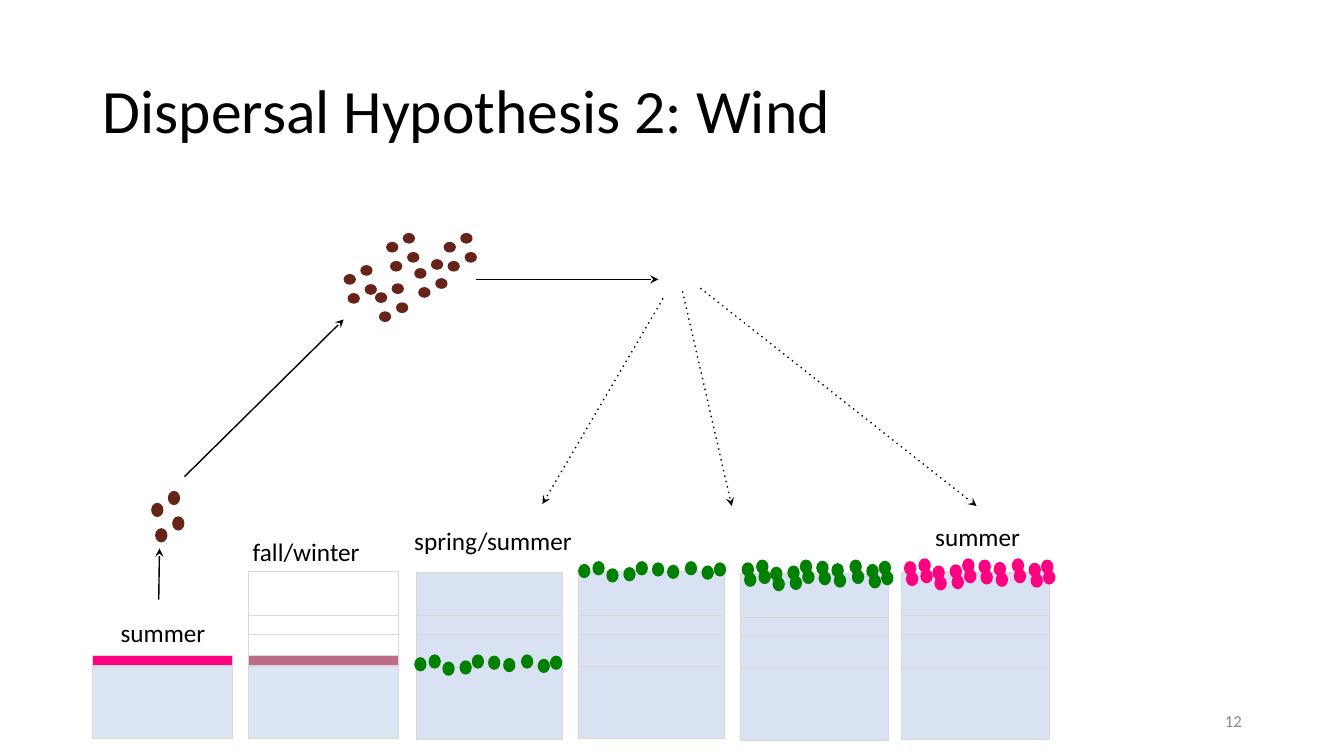
from dataclasses import dataclass
from typing import NamedTuple

from lxml import etree
from pptx import Presentation
from pptx import util as u
from pptx.dml import color
from pptx.enum import shapes, text
from pptx.oxml import ns
from pptx.slide import Slide


@dataclass(frozen=True)
class Theme:
    font: str = "Calibri"
    title_size: float = 44
    label_size: float = 18
    number_size: float = 12
    ink: str = "000000"
    number: str = "888888"
    outline: str = "D8D8D8"
    ice: str = "DCE6F2"
    melt: str = "D8E2F3"
    snow: str = "FFFFFF"
    bloom: str = "FF0080"
    buried_bloom: str = "BC6C87"
    green: str = "008000"
    spore: str = "662418"
    outline_width: float = 0.75
    arrow_width: float = 1


class Box(NamedTuple):
    left: float
    top: float
    width: float
    height: float


class Core(NamedTuple):
    left: float
    ice_top: float
    width: float
    ice: str
    upper: str | None = None
    band: str | None = None


class DotGroup(NamedTuple):
    left: float
    top: float
    fill: str
    offsets: list[tuple[float, float]]
    x_scale: float = 1
    y_scale: float = 1


class Arrow(NamedTuple):
    x1: float
    y1: float
    x2: float
    y2: float
    dotted: bool = False


class Label(NamedTuple):
    words: str
    left: float
    top: float
    width: float


THEME = Theme()
ICE_HEIGHT = 1.83
UPPER_HEIGHTS = (0.81, 0.48, 1.09)
BAND_HEIGHT = 0.25
BAND_RISE = 0.27
DOT_WIDTH, DOT_HEIGHT = 0.31, 0.36
LABEL_HEIGHT = 1.02
WIDE = 1.01
FLAT = 0.75

ALGAE = [
    (0, 0.07), (0.36, 0), (0.71, 0.18), (1.14, 0.15), (1.45, 0),
    (1.86, 0.03), (2.24, 0.09), (2.69, 0), (3.11, 0.11), (3.42, 0.03),
]
SPORES = [(0.1, 0.94), (0.53, 0.64), (0, 0.3), (0.42, 0)]

CORES = [
    Core(2.34, 16.79, 3.51, THEME.ice, band=THEME.bloom),
    Core(6.27, 16.79, 3.78, THEME.ice, THEME.snow, THEME.buried_bloom),
    Core(10.49, 16.81, 3.68, THEME.melt, THEME.melt),
    Core(14.58, 16.79, 3.68, THEME.melt, THEME.melt),
    Core(18.67, 16.84, 3.73, THEME.melt, THEME.melt),
    Core(22.73, 16.81, 3.73, THEME.melt, THEME.melt),
]
ALGAE_ROWS = [
    DotGroup(10.44, 16.49, THEME.green, ALGAE),
    DotGroup(14.57, 14.14, THEME.green, ALGAE),
    DotGroup(18.69, 14.1, THEME.green, ALGAE, WIDE),
    DotGroup(18.75, 14.36, THEME.green, ALGAE, WIDE),
    DotGroup(22.78, 14.07, THEME.bloom, ALGAE, WIDE),
    DotGroup(22.83, 14.34, THEME.bloom, ALGAE, WIDE),
]
RISING_SPORES = DotGroup(3.81, 12.37, THEME.spore, SPORES)
AIRBORNE_SPORES = [
    DotGroup(left, top, THEME.spore, SPORES, y_scale=FLAT)
    for left, top in [
        (9.45, 7.14), (10.44, 6.53), (8.66, 6.68), (9.73, 5.87), (11.18, 5.87),
    ]
]
ARROWS = [
    Arrow(4, 15.11, 4.02, 13.82),
    Arrow(4.65, 12.01, 8.66, 8.05),
    Arrow(11.99, 7.04, 16.59, 7.04),
    Arrow(17.2, 7.34, 18.44, 12.75, dotted=True),
    Arrow(17.65, 7.26, 24.61, 12.75, dotted=True),
    Arrow(16.71, 7.52, 13.67, 12.7, dotted=True),
]
SEASONS = [
    Label("summer", 2.79, 15.42, 2.64),
    Label("fall/winter", 6.12, 13.39, 3.73),
    Label("spring/summer", 10.19, 13.11, 4.6),
    Label("summer", 23.32, 13, 2.64),
]


def add_words(slide: Slide, words: str, box: Box, *, size: float,
              ink: str = THEME.ink, align: text.PP_ALIGN = text.PP_ALIGN.LEFT,
              anchor: text.MSO_ANCHOR = text.MSO_ANCHOR.TOP,
              spacing: float = 1) -> None:
    frame = slide.shapes.add_textbox(*map(u.Cm, box)).text_frame
    frame.word_wrap = True
    frame.vertical_anchor = anchor
    line = frame.paragraphs[0]
    line.alignment = align
    line.line_spacing = spacing
    run = line.add_run()
    run.text = words
    run.font.name = THEME.font
    run.font.size = u.Pt(size)
    run.font.color.rgb = color.RGBColor.from_string(ink)


def add_solid(slide: Slide, kind: shapes.MSO_SHAPE, box: Box, fill: str,
              outline: str | None = None) -> None:
    solid = slide.shapes.add_shape(kind, *map(u.Cm, box))
    solid.shadow.inherit = False
    solid.fill.solid()
    solid.fill.fore_color.rgb = color.RGBColor.from_string(fill)
    if outline:
        solid.line.color.rgb = color.RGBColor.from_string(outline)
        solid.line.width = u.Pt(THEME.outline_width)
    else:
        solid.line.fill.background()


def add_core(slide: Slide, core: Core) -> None:
    layers = [(core.ice_top, ICE_HEIGHT, core.ice)]
    if core.upper:
        top = core.ice_top
        for height in UPPER_HEIGHTS:
            top -= height
            layers.append((top, height, core.upper))
    if core.band:
        layers.append((core.ice_top - BAND_RISE, BAND_HEIGHT, core.band))
    for top, height, fill in layers:
        add_solid(slide, shapes.MSO_SHAPE.RECTANGLE,
                  Box(core.left, top, core.width, height), fill, THEME.outline)


def add_dots(slide: Slide, group: DotGroup) -> None:
    for dx, dy in group.offsets:
        box = Box(group.left + dx * group.x_scale, group.top + dy * group.y_scale,
                  DOT_WIDTH * group.x_scale, DOT_HEIGHT * group.y_scale)
        add_solid(slide, shapes.MSO_SHAPE.OVAL, box, group.fill)


def add_arrow(slide: Slide, arrow: Arrow) -> None:
    ends = map(u.Cm, (arrow.x1, arrow.y1, arrow.x2, arrow.y2))
    wind = slide.shapes.add_connector(shapes.MSO_CONNECTOR.STRAIGHT, *ends)
    wind.line.color.rgb = color.RGBColor.from_string(THEME.ink)
    wind.line.width = u.Pt(THEME.arrow_width)
    properties = wind.element.spPr
    stroke = properties.find(ns.qn("a:ln"))
    if arrow.dotted:
        etree.SubElement(stroke, ns.qn("a:prstDash"), val="dot")
    etree.SubElement(stroke, ns.qn("a:tailEnd"), type="stealth")
    etree.SubElement(properties, ns.qn("a:effectLst"))


def main() -> None:
    deck = Presentation()
    deck.slide_width, deck.slide_height = u.Cm(33.87), u.Cm(19.05)
    slide = deck.slides.add_slide(deck.slide_layouts[6])
    add_words(slide, "Dispersal Hypothesis 2: Wind", Box(2.34, 1.02, 29.21, 3.68),
              size=THEME.title_size, anchor=text.MSO_ANCHOR.MIDDLE, spacing=0.9)
    for core in CORES:
        add_core(slide, core)
    for group in [*ALGAE_ROWS, RISING_SPORES, *AIRBORNE_SPORES]:
        add_dots(slide, group)
    for season in SEASONS:
        add_words(slide, season.words,
                  Box(season.left, season.top, season.width, LABEL_HEIGHT),
                  size=THEME.label_size)
    for arrow in ARROWS:
        add_arrow(slide, arrow)
    add_words(slide, "12", Box(23.93, 17.65, 7.62, LABEL_HEIGHT),
              size=THEME.number_size, ink=THEME.number,
              align=text.PP_ALIGN.RIGHT, anchor=text.MSO_ANCHOR.MIDDLE)
    deck.save("out.pptx")


if __name__ == "__main__":
    main()
